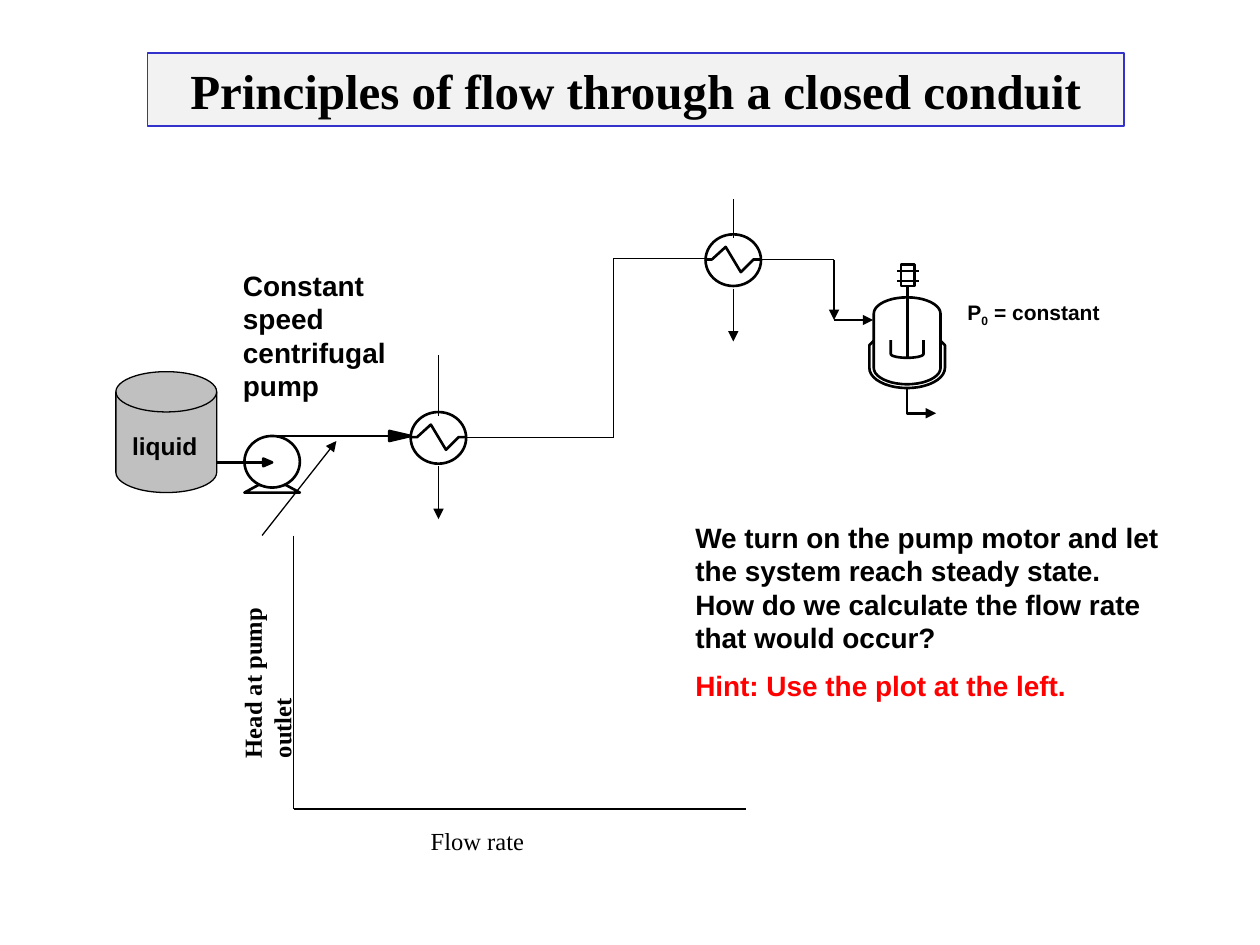
import math

from lxml import etree
from pptx import Presentation
from pptx.dml.color import RGBColor
from pptx.enum.shapes import MSO_CONNECTOR, MSO_SHAPE
from pptx.enum.text import MSO_ANCHOR, MSO_AUTO_SIZE, PP_ALIGN
from pptx.oxml.ns import qn
from pptx.util import Inches, Pt

STRAIGHT = MSO_CONNECTOR.STRAIGHT
OVAL = MSO_SHAPE.OVAL
RECTANGLE = MSO_SHAPE.RECTANGLE
TANK = MSO_SHAPE.FLOWCHART_MAGNETIC_DISK
CENTER = PP_ALIGN.CENTER
MIDDLE = MSO_ANCHOR.MIDDLE
NO_AUTOFIT = MSO_AUTO_SIZE.NONE

BLACK, WHITE, GREY, RED = "000000", "FFFFFF", "C0C0C0", "FF0000"
THIN, THICK = 0.75, 1.5
SANS, SERIF = "Arial", "Times New Roman"


def color(hex_string):
    return RGBColor.from_string(hex_string)


def style_line(line, width, hex_string=BLACK, arrow=False):
    line.color.rgb = color(hex_string)
    line.width = Pt(width)
    if arrow:
        properties = line._get_or_add_ln()
        etree.SubElement(properties, qn("a:tailEnd"), type="triangle")


def style_shape(shape, fill, width, arrow=False):
    if fill:
        shape.fill.solid()
        shape.fill.fore_color.rgb = color(fill)
    else:
        shape.fill.background()
    style_line(shape.line, width, arrow=arrow)
    shape.shadow.inherit = False


def format_paragraph(paragraph, size, font, bold=True, hex_string=BLACK):
    for run in paragraph.runs:
        run.font.size = Pt(size)
        run.font.name = font
        run.font.bold = bold
        run.font.color.rgb = color(hex_string)


def arc(center_x, center_y, radius_x, radius_y, start, end, steps=20):
    """Points on an ellipse between two angles in degrees, clockwise from the right."""
    angles = [math.radians(start + (end - start) * i / steps) for i in range(steps + 1)]
    return [(center_x + radius_x * math.cos(a), center_y + radius_y * math.sin(a))
            for a in angles]


class Region:
    """Draws parts in inches measured from the region's top left corner."""

    def __init__(self, slide, left, top):
        self.shapes, self.left, self.top = slide.shapes, left, top

    def point(self, x, y):
        return Inches(self.left + x), Inches(self.top + y)

    def line(self, start, end, width=THIN, arrow=False):
        connector = self.shapes.add_connector(
            STRAIGHT, *self.point(*start), *self.point(*end))
        style_line(connector.line, width, arrow=arrow)
        etree.SubElement(connector._element.spPr, qn("a:effectLst"))

    def outline(self, points, fill=None, closed=False, arrow=False):
        first, *others = [self.point(*point) for point in points]
        builder = self.shapes.build_freeform(*first)
        builder.add_line_segments(others, close=closed)
        style_shape(builder.convert_to_shape(), fill, THICK, arrow)

    def preset(self, kind, x, y, width, height, fill=WHITE, line_width=THICK):
        shape = self.shapes.add_shape(
            kind, *self.point(x, y), Inches(width), Inches(height))
        style_shape(shape, fill, line_width)

    def text(self, x, y, width, height, content, size, font=SANS, bold=True):
        box = self.shapes.add_textbox(*self.point(x, y), Inches(width), Inches(height))
        box.text_frame.word_wrap = True
        box.text_frame.text = content
        for paragraph in box.text_frame.paragraphs:
            format_paragraph(paragraph, size, font, bold)
        return box


def set_title(slide, left, top, width, height):
    title = slide.shapes.title
    title.left, title.top = Inches(left), Inches(top)
    title.width, title.height = Inches(width), Inches(height)
    title.fill.solid()
    title.fill.fore_color.rgb = color("F2F2F2")
    style_line(title.line, THIN, "3333CC")
    frame = title.text_frame
    frame.text = "Principles of flow through a closed conduit"
    frame.auto_size = NO_AUTOFIT
    frame.vertical_anchor = MIDDLE
    frame.paragraphs[0].alignment = CENTER
    format_paragraph(frame.paragraphs[0], 28, SERIF)


def add_plot(slide, left, top):
    plot = Region(slide, left, top)
    width, height = 3.59, 2.17
    plot.line((0, 0), (0, height))
    plot.line((0, height), (width, height))
    plot.text(0.99, 2.26, 1.1, 0.33, "Flow rate", 14, SERIF, bold=False)
    label = plot.text(-1.23, 0.8, 1.8, 0.33, "Head at pump outlet", 14, SERIF)
    label.rotation = 270


def add_tank(slide, left, top):
    tank = Region(slide, left, top)
    tank.preset(TANK, 0, 0, 0.8, 0.96, GREY, THIN)
    tank.text(0.03, 0.42, 0.75, 0.33, "liquid", 14)


def add_pump(slide, left, top):
    pump = Region(slide, left, top)
    size, middle = 0.44, 0.21
    pump.outline([(0.11, 0.39), (0, 0.45), (size, 0.45), (0.33, 0.39)], WHITE, closed=True)
    pump.preset(OVAL, 0, 0, size, 0.41)
    feeds = [(-0.22, 0.22, middle, 0.07, 0.03), (0.22, 1.32, 0, 0.17, 0.04)]
    for start, tip, y, length, half_width in feeds:
        base = tip - length
        pump.line((start, y), (base, y), THICK)
        pump.outline([(base, y - half_width), (tip, y), (base, y + half_width)],
                     BLACK, closed=True)
    pump.line((0.14, 0.79), (0.73, 0.04), arrow=True)
    pump.text(-0.11, -1.38, 1.42, 1.17, "Constant speed centrifugal pump", 16)


def add_heat_exchanger(slide, left, top, inlet_length):
    exchanger = Region(slide, left, top)
    width, height = 0.44, 0.41
    center, middle = width / 2, 0.2
    exchanger.preset(OVAL, 0, 0, width, height)
    exchanger.outline([(0, middle), (0.05, middle), (0.16, middle - 0.1),
                       (0.28, middle + 0.1), (0.38, middle), (width, middle)])
    exchanger.line((center, 0.03 - inlet_length), (center, 0.03))
    exchanger.line((center, 0.43), (center, 0.85), arrow=True)


def add_pipes(slide, left, top):
    """Pipes from the first exchanger to the second and on to the reactor."""
    pipes = Region(slide, left, top)
    pipes.line((0, 0), (1.17, 0))
    pipes.line((1.17, 0), (1.17, -1.42))
    pipes.line((1.17, -1.42), (1.9, -1.42))
    pipes.line((2.34, -1.41), (2.92, -1.41))
    pipes.line((2.92, -1.41), (2.92, -0.93), arrow=True)
    pipes.line((2.92, -0.93), (3.23, -0.93), THICK, arrow=True)


def add_reactor(slide, left, top):
    reactor = Region(slide, left, top)
    center = 0.3
    jacket = [(0.56, 0.6), (0.6, 0.64)] + arc(center, 0.82, 0.3, 0.16, 0, 180)
    reactor.outline(jacket + [(0, 0.64), (0.04, 0.6)], WHITE, closed=True)
    vessel = arc(center, 0.82, 0.265, 0.13, 0, 180) + arc(center, 0.39, 0.265, 0.13, 180, 360)
    reactor.outline(vessel, WHITE, closed=True)
    reactor.line((center, 0.09), (center, 0.74), THICK)
    reactor.preset(RECTANGLE, center - 0.05, 0, 0.11, 0.17)
    for y in (0.05, 0.13):
        reactor.line((center - 0.08, y), (center + 0.09, y), THICK)
    reactor.outline([(0.17, 0.6)] + arc(center, 0.71, 0.13, 0.03, 180, 0) + [(0.43, 0.6)])
    reactor.outline([(center, 0.98), (center, 1.18), (0.53, 1.18)], arrow=True)
    label = reactor.text(0.68, 0.23, 1.42, 0.3, "", 12)
    paragraph = label.text_frame.paragraphs[0]
    for content in ("P", "0", " = constant"):
        paragraph.add_run().text = content
    format_paragraph(paragraph, 12, SANS)
    paragraph.runs[1]._r.get_or_add_rPr().set("baseline", "-25000")


def add_question(slide, left, top, width, height):
    box = Region(slide, left, top).text(
        0, 0, width, height,
        "We turn on the pump motor and let the system reach steady state.\v"
        "How do we calculate the flow rate that would occur?\n"
        "Hint: Use the plot at the left.", 16)
    hint = box.text_frame.paragraphs[1]
    hint.space_before = Pt(8)
    format_paragraph(hint, 16, SANS, hex_string=RED)


def main():
    presentation = Presentation()
    presentation.slide_width, presentation.slide_height = Inches(10), Inches(7.5)
    slide = presentation.slides.add_slide(presentation.slide_layouts[5])
    set_title(slide, 1.17, 0.42, 7.75, 0.58)
    add_plot(slide, 2.33, 4.25)
    add_tank(slide, 0.92, 2.95)
    add_pump(slide, 1.94, 3.46)
    add_heat_exchanger(slide, 3.26, 3.27, inlet_length=0.48)
    add_heat_exchanger(slide, 5.6, 1.86, inlet_length=0.31)
    add_pipes(slide, 3.7, 3.47)
    add_reactor(slide, 6.9, 2.1)
    add_question(slide, 5.42, 4.08, 4, 1.57)
    presentation.save("out.pptx")


if __name__ == "__main__":
    main()
